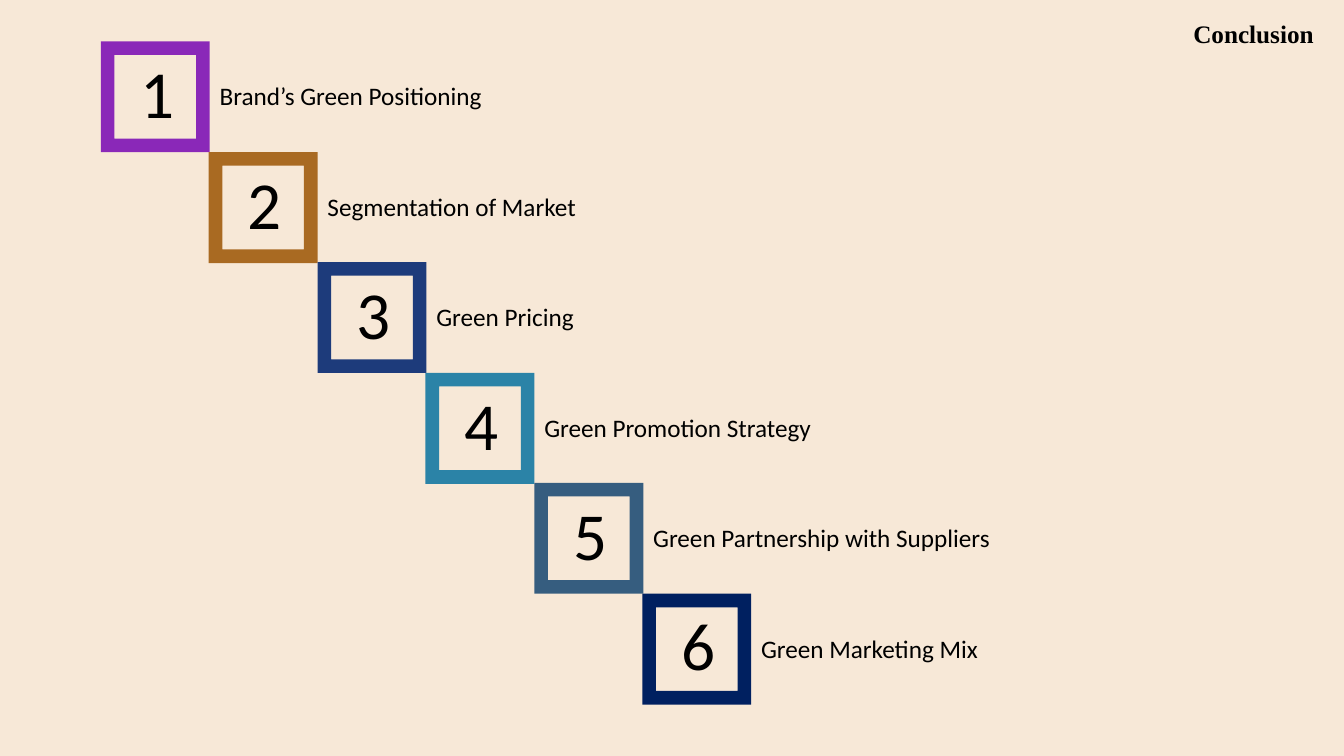
from pptx import Presentation
from pptx.dml.color import RGBColor
from pptx.enum.shapes import MSO_SHAPE
from pptx.enum.text import MSO_ANCHOR, MSO_AUTO_SIZE, PP_ALIGN
from pptx.util import Emu, Pt

FRAME = MSO_SHAPE.FRAME
TOP = MSO_ANCHOR.TOP
GROW = MSO_AUTO_SIZE.SHAPE_TO_FIT_TEXT
LEFT, RIGHT = PP_ALIGN.LEFT, PP_ALIGN.RIGHT
EMU_PER_PX = 9144
TITLE_ONLY = 5

STEPS = [
    ("Brand’s Green Positioning", "8A28B8"),
    ("Segmentation of Market", "A96A22"),
    ("Green Pricing", "1D3B7B"),
    ("Green Promotion Strategy", "2B83A7"),
    ("Green Partnership with Suppliers", "365D7F"),
    ("Green Marketing Mix", "002060"),
]
FIRST_LEFT, FIRST_TOP = 100, 41
STEP_RIGHT, STEP_DOWN = 107.4, 109.6
FRAME_WIDTH, FRAME_HEIGHT = 108, 110


def px(length):
    """Turn pixels, 100 to the inch, into EMU."""
    return Emu(length * EMU_PER_PX)


def colour(value):
    """Turn a hex string into a colour."""
    return RGBColor.from_string(value)


class SlidePainter:
    """Hold the text style and draw elements on the current slide."""

    body_font = "Calibri"
    title_font = "Times New Roman"
    ink = "000000"

    def __init__(self, page, background):
        """Keep the slide and colour its background."""
        self.page = page
        page.background.fill.solid()
        page.background.fill.fore_color.rgb = colour(background)

    def set_text(self, box, text, size, font, bold=False, align=LEFT):
        """Fill a box with one styled paragraph."""
        frame = box.text_frame
        frame.text = text
        frame.word_wrap = True
        frame.auto_size = GROW
        frame.vertical_anchor = TOP
        para = frame.paragraphs[0]
        para.alignment = align
        para.font.size = Pt(size)
        para.font.name = font
        para.font.bold = bold
        para.font.color.rgb = colour(self.ink)

    def title(self, left, top, width, height, text):
        """Place and format the title placeholder."""
        box = self.page.shapes.title
        box.left, box.top = px(left), px(top)
        box.width, box.height = px(width), px(height)
        self.set_text(box, text, 18, self.title_font, bold=True, align=RIGHT)

    def text(self, left, top, width, height, text, size):
        """Add a text box."""
        box = self.page.shapes.add_textbox(px(left), px(top), px(width), px(height))
        self.set_text(box, text, size, self.body_font)

    def frame(self, left, top, width, height, fill):
        """Add a hollow square of one colour."""
        shape = self.page.shapes.add_shape(FRAME, px(left), px(top), px(width), px(height))
        shape.shadow.inherit = False
        shape.fill.solid()
        shape.fill.fore_color.rgb = colour(fill)
        shape.line.fill.background()


def main():
    """Build the staircase of conclusions and save it."""
    deck = Presentation()
    deck.slide_width, deck.slide_height = px(1333), px(750)
    page = deck.slides.add_slide(deck.slide_layouts[TITLE_ONLY])
    painter = SlidePainter(page, "F7E8D7")
    painter.title(818, 13, 495, 40, "Conclusion")
    for index, (label, fill) in enumerate(STEPS):
        left = round(FIRST_LEFT + index * STEP_RIGHT)
        top = round(FIRST_TOP + index * STEP_DOWN)
        painter.frame(left, top, FRAME_WIDTH, FRAME_HEIGHT, fill)
        painter.text(left + 29, top + 5, 45, 91, str(index + 1), 48)
        painter.text(left + FRAME_WIDTH, top + 34, 557, 40, label, 18)
    deck.save("out.pptx")


if __name__ == "__main__":
    main()
